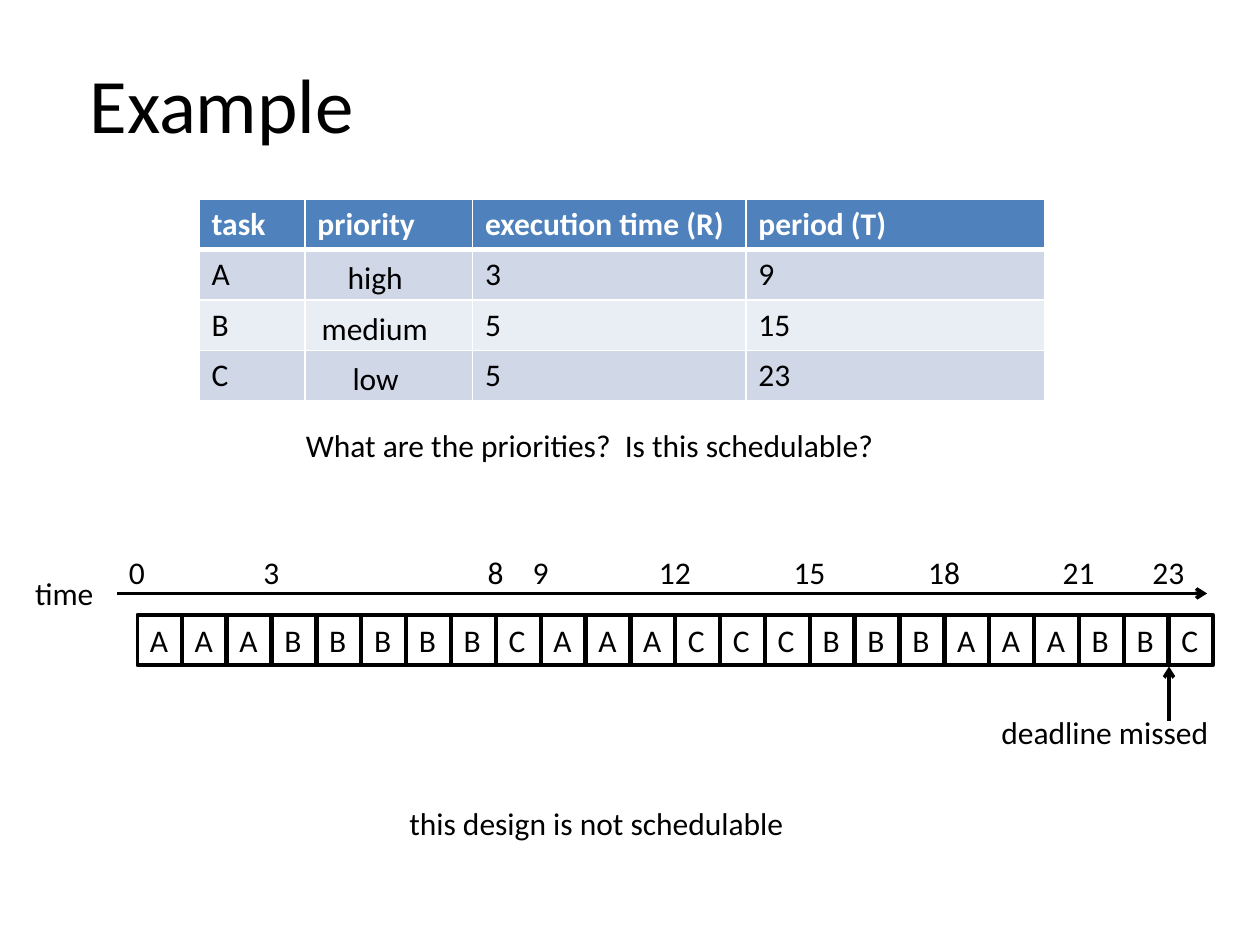
from lxml.etree import SubElement
from pptx import Presentation
from pptx.dml.color import RGBColor
from pptx.enum.shapes import MSO_CONNECTOR, MSO_SHAPE
from pptx.enum.text import MSO_ANCHOR, MSO_AUTO_SIZE, PP_ALIGN
from pptx.oxml import parse_xml
from pptx.oxml.ns import nsdecls, qn
from pptx.util import Inches, Pt

COLORS = {
    "ink": "000000",
    "paper": "FFFFFF",
    "header": "4F81BD",
    "band_dark": "D0D8E8",
    "band_light": "E9EDF4",
}

deck = Presentation()
deck.slide_width, deck.slide_height = Inches(10), Inches(7.5)
COL = deck.slide_width / 100
ROW = deck.slide_height / 75
slide = deck.slides.add_slide(deck.slide_layouts[5])


def write(frame, text, size=18, color="ink", bold=False, align=PP_ALIGN.LEFT,
          anchor=MSO_ANCHOR.TOP, wrap=False, grow=True):
    frame.word_wrap = wrap
    frame.vertical_anchor = anchor
    if grow:
        frame.auto_size = MSO_AUTO_SIZE.SHAPE_TO_FIT_TEXT
    paragraph = frame.paragraphs[0]
    paragraph.alignment = align
    run = paragraph.add_run()
    run.text = text
    run.font.name = "Calibri"
    run.font.size = Pt(size)
    run.font.bold = bold
    run.font.color.rgb = RGBColor.from_string(COLORS[color])


def draw_arrow(x1, y1, x2, y2):
    arrow = slide.shapes.add_connector(
        MSO_CONNECTOR.STRAIGHT,
        int(x1 * COL), int(y1 * ROW), int(x2 * COL), int(y2 * ROW))
    arrow.line.width = Pt(2)
    arrow.line.color.rgb = RGBColor.from_string(COLORS["ink"])
    SubElement(arrow.line._get_or_add_ln(), qn("a:tailEnd"), type="arrow")
    SubElement(arrow._element.spPr, qn("a:effectLst"))


heading = slide.shapes.title
heading.left, heading.top = int(6.1 * COL), int(4 * ROW)
heading.width, heading.height = int(23.2 * COL), int(8.4 * ROW)
write(heading.text_frame, "Example", size=44)

tasks = [
    ["task", "priority", "execution time (R)", "period (T)"],
    ["A", "", "3", "9"],
    ["B", "", "5", "15"],
    ["C", "", "5", "23"],
]
table_left, table_top, table_row = 15.8, 15.8, 4
column_widths = [8.4, 13.3, 21.7, 23.7]
task_table = slide.shapes.add_table(
    len(tasks), len(column_widths), int(table_left * COL), int(table_top * ROW),
    int(sum(column_widths) * COL), int(table_row * len(tasks) * ROW)).table
for column, width in zip(task_table.columns, column_widths):
    column.width = int(width * COL)

for r, values in enumerate(tasks):
    band = "header" if r == 0 else ("band_dark" if r % 2 else "band_light")
    edges = {"lnL": 1, "lnR": 1, "lnT": 3 if r == 1 else 1, "lnB": 3 if r == 0 else 1}
    for c, value in enumerate(values):
        cell = task_table.cell(r, c)
        cell.fill.solid()
        cell.fill.fore_color.rgb = RGBColor.from_string(COLORS[band])
        if value:
            write(cell.text_frame, value, color="paper" if r == 0 else "ink",
                  bold=r == 0, wrap=True, grow=False)
        for position, (edge, points) in enumerate(edges.items()):
            cell._tc.get_or_add_tcPr().insert(position, parse_xml(
                f'<a:{edge} {nsdecls("a")} w="{Pt(points)}"><a:solidFill>'
                f'<a:srgbClr val="{COLORS["paper"]}"/></a:solidFill></a:{edge}>'))

slot_left, slot_pitch, slot_width, slot_top = 10.9, 3.56, 3.5, 48.8
line_height = 4

labels = [
    ("What are the priorities?  Is this schedulable?", 23.3, 33.3, 47.6),
    ("this design is not schedulable", 31.5, 63.3, 32.1),
    ("time", 1.8, 45.1, 6.7),
    ("deadline missed", 78.5, 56.1, 18.6),
]
priority_middle = 29.85
for level, (priority, width) in enumerate([("high", 6.5), ("medium", 10.6), ("low", 5.7)], 1):
    labels.append((priority, priority_middle - width / 2,
                   table_top + level * table_row + 0.2, width))
for tick in [0, 3, 8, 9, 12, 15, 18, 21, 23]:
    width = 3.3 if tick < 10 else 4.6
    labels.append((str(tick), slot_left + tick * slot_pitch - width / 2, 43.4, width))

for text, left, top, width in labels:
    label = slide.shapes.add_textbox(
        int(left * COL), int(top * ROW), int(width * COL), int(line_height * ROW))
    write(label.text_frame, text)

for time, task in enumerate("AAABBBBBCAAACCCBBBAAABBC"):
    slot = slide.shapes.add_shape(
        MSO_SHAPE.RECTANGLE, int((slot_left + time * slot_pitch) * COL),
        int(slot_top * ROW), int(slot_width * COL), int(line_height * ROW))
    slot.shadow.inherit = False
    slot.fill.background()
    slot.line.width = Pt(2)
    slot.line.color.rgb = RGBColor.from_string(COLORS["ink"])
    write(slot.text_frame, task)

deadline = slot_left + 23 * slot_pitch
draw_arrow(9.3, 47.1, 95.8, 47.1)
draw_arrow(deadline, 57.2, deadline, 52.9)

deck.save("out.pptx")
